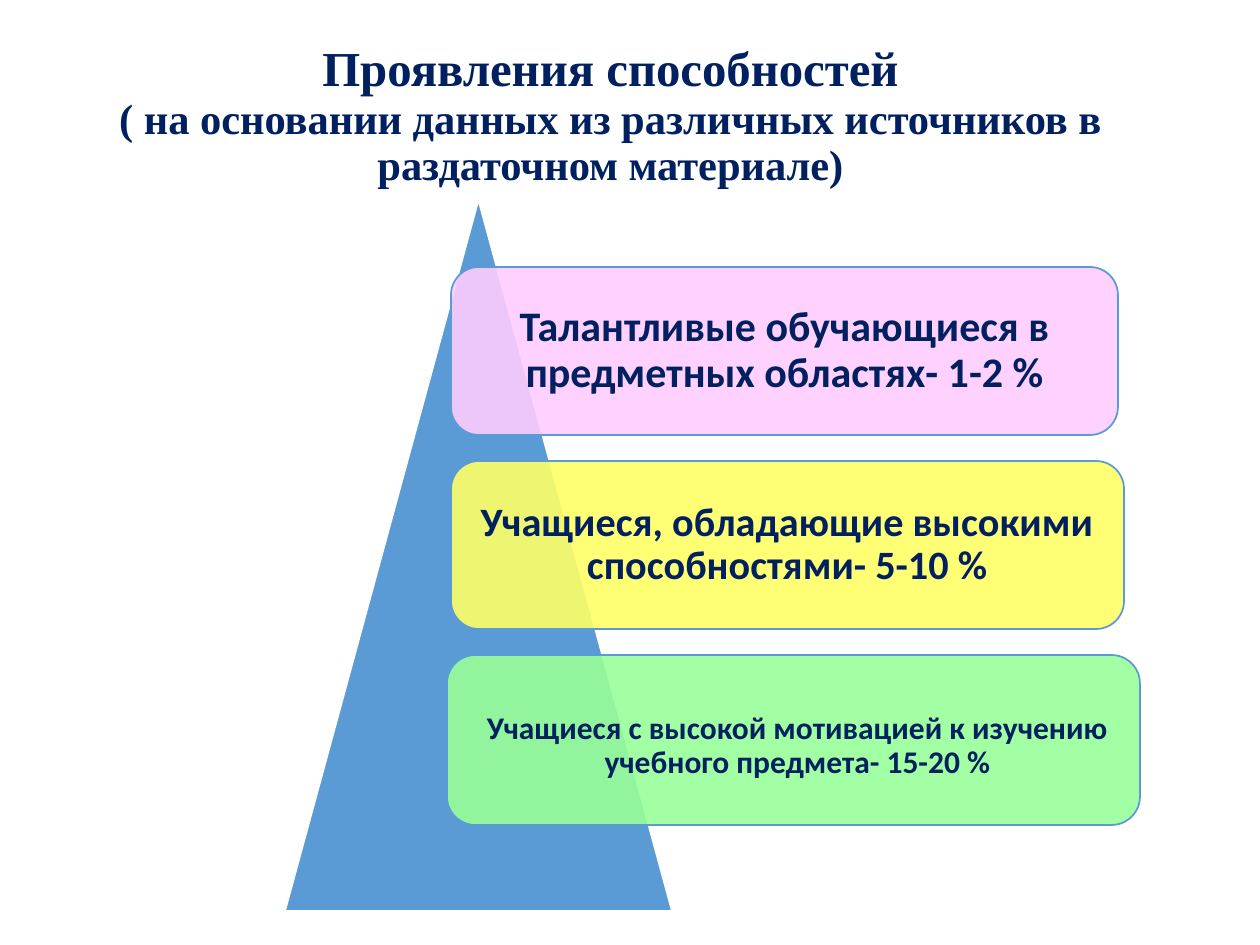
import pptx
import pptx.util
import pptx.dml.color
import pptx.enum.shapes
import pptx.enum.text
import pptx.oxml
import pptx.oxml.ns

PX_PER_INCH = 126
NAVY = "002060"
BLUE = "5B9BD5"
SHAPES = pptx.enum.shapes.MSO_SHAPE

# left, top, width, height, fill, text size, (left, top, right, bottom) insets, text
LEVELS = [
    (451, 267, 667, 168, "FFCCFF", 24, (13, 13, 13, 13),
     "Талантливые обучающиеся в предметных областях- 1-2 %"),
    (451, 461, 673, 168, "FFFF66", 23, (13, 13, 13, 13),
     "Учащиеся, обладающие высокими способностями- 5-10 %"),
    (447, 655, 693, 170, "99FF99", 18, (22, 26, 14, 14),
     "Учащиеся с высокой мотивацией к изучению учебного предмета- 15-20 %"),
]


def px(length):
    return pptx.util.Emu(round(length * 914400 / PX_PER_INCH))


def color(value):
    return pptx.dml.color.RGBColor.from_string(value)


def format_frame(frame):
    """Wrap and centre the text; return its first paragraph."""
    frame.word_wrap = True
    frame.auto_size = pptx.enum.text.MSO_AUTO_SIZE.NONE
    frame.vertical_anchor = pptx.enum.text.MSO_ANCHOR.MIDDLE
    para = frame.paragraphs[0]
    para.alignment = pptx.enum.text.PP_ALIGN.CENTER
    para.line_spacing = 0.9
    return para


def add_span(para, text, size, font):
    span = para.add_run()
    span.text = text
    span.font.size = pptx.util.Pt(size)
    span.font.name = font
    span.font.bold = True
    span.font.color.rgb = color(NAVY)


def add_title(page):
    title = page.shapes.title
    title.left, title.top, title.width, title.height = map(px, (0, 38, 1221, 158))
    para = format_frame(title.text_frame)
    add_span(para, "Проявления способностей", 27.9, "Times New Roman")
    para.add_line_break()
    add_span(para, "( на основании данных из различных источников в раздаточном материале)",
             24.3, "Times New Roman")


def add_shape(page, kind, place, fill, line):
    shape = page.shapes.add_shape(kind, *map(px, place))
    shape.shadow.inherit = False
    shape.fill.solid()
    shape.fill.fore_color.rgb = color(fill)
    shape.line.color.rgb = color(line)
    shape.line.width = pptx.util.Pt(1)
    return shape


def set_opacity(shape, percent):
    tone = shape.fill._xPr.find(".//" + pptx.oxml.ns.qn("a:srgbClr"))
    tone.append(pptx.oxml.parse_xml(
        f'<a:alpha {pptx.oxml.ns.nsdecls("a")} val="{percent * 1000}"/>'))


def add_level(page, left, top, width, height, fill, size, insets, text):
    box = add_shape(page, SHAPES.ROUNDED_RECTANGLE, (left, top, width, height), fill, BLUE)
    set_opacity(box, 90)
    frame = box.text_frame
    (frame.margin_left, frame.margin_top,
     frame.margin_right, frame.margin_bottom) = map(px, insets)
    add_span(format_frame(frame), text, size, "Calibri")


def main():
    deck = pptx.Presentation()
    deck.slide_width, deck.slide_height = px(1260), px(945)
    page = deck.slides.add_slide(deck.slide_layouts[5])
    add_title(page)
    add_shape(page, SHAPES.ISOSCELES_TRIANGLE, (285, 200, 387, 711), BLUE, "FFFFFF")
    for level in LEVELS:
        add_level(page, *level)
    deck.save("out.pptx")


if __name__ == "__main__":
    main()
